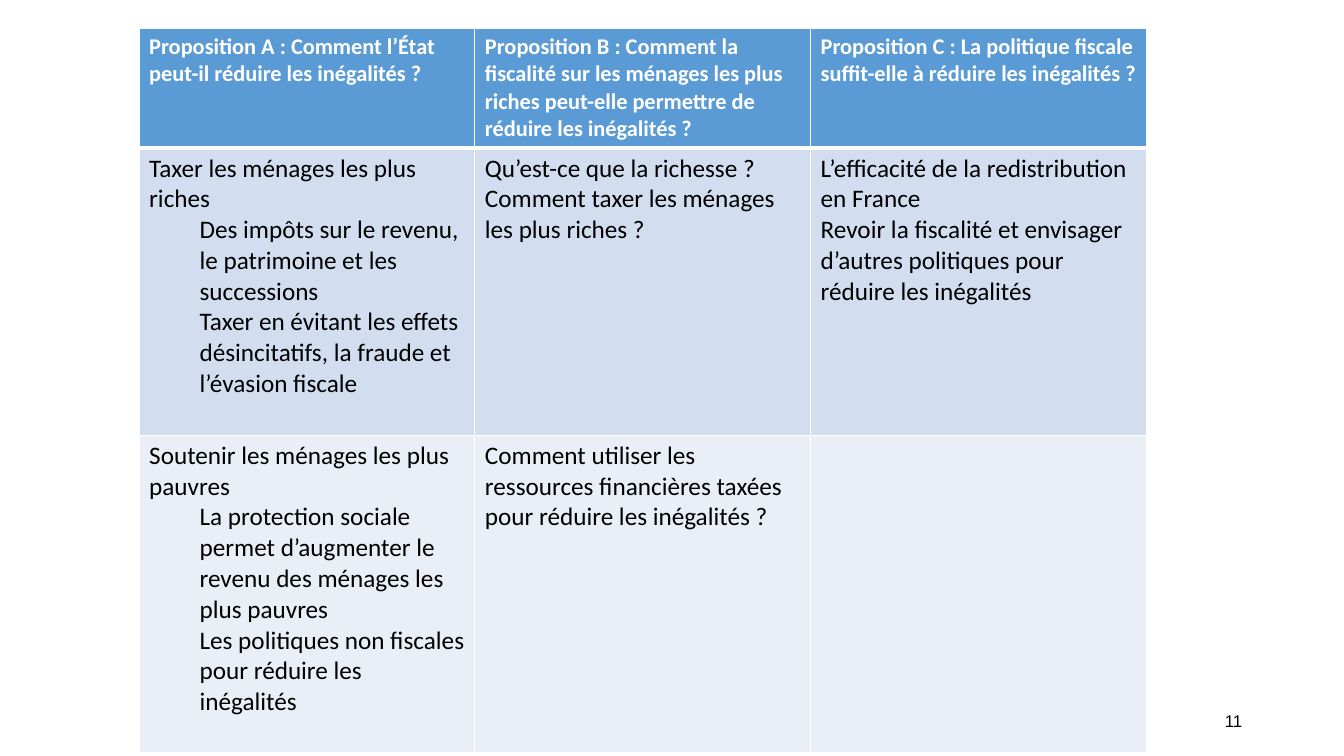
import pptx
import pptx.util
import pptx.dml.color
import pptx.enum.text
import pptx.oxml.ns
from lxml import etree

Inches, Pt = pptx.util.Inches, pptx.util.Pt

# Each cell is a list of (indent level, text).
ROWS = [
    [
        [(0, "Proposition A : Comment l’État peut-il réduire les inégalités ?")],
        [(0, "Proposition B : Comment la fiscalité sur les ménages les plus riches "
             "peut-elle permettre de réduire les inégalités ?")],
        [(0, "Proposition C : La politique fiscale suffit-elle à réduire les inégalités ?")],
    ],
    [
        [(0, "Taxer les ménages les plus riches"),
         (1, "Des impôts sur le revenu, le patrimoine et les successions"),
         (1, "Taxer en évitant les effets désincitatifs, la fraude et l’évasion fiscale")],
        [(0, "Qu’est-ce que la richesse ?"),
         (0, "Comment taxer les ménages les plus riches ?")],
        [(0, "L’efficacité de la redistribution en France"),
         (0, "Revoir la fiscalité et envisager d’autres politiques pour réduire les inégalités")],
    ],
    [
        [(0, "Soutenir les ménages les plus pauvres"),
         (1, "La protection sociale permet d’augmenter le revenu des ménages les plus pauvres"),
         (1, "Les politiques non fiscales pour réduire les inégalités")],
        [(0, "Comment utiliser les ressources financières taxées pour réduire les inégalités ?")],
        [],
    ],
]
ROW_HEIGHTS = [1.19, 2.85, 3.15]
# fill, text colour, size, bold
ROW_STYLES = [
    ("5B9BD5", "FFFFFF", 16, True),
    ("D2DEEF", "000000", 18, False),
    ("EAEFF7", "000000", 18, False),
]
COLUMN_WIDTH = 3.33
PAGE_NUMBER = "11"


def colour(value):
    return pptx.dml.color.RGBColor.from_string(value)


def format_text(para, font, size, text_colour, bold=False):
    for span in para.runs:
        span.font.name = font
        span.font.size = Pt(size)
        span.font.bold = bold
        span.font.color.rgb = colour(text_colour)


def add_borders(cell, widths):
    """Draw white cell borders; widths maps a side (L, R, T, B) to points."""
    properties = cell._tc.get_or_add_tcPr()
    qn = pptx.oxml.ns.qn
    for side, width in widths.items():
        line = etree.SubElement(properties, qn(f"a:ln{side}"), w=str(Pt(width)))
        fill = etree.SubElement(line, qn("a:solidFill"))
        etree.SubElement(fill, qn("a:srgbClr"), val="FFFFFF")


def fill_cell(cell, lines, row):
    fill, text_colour, size, bold = ROW_STYLES[row]
    add_borders(cell, {"L": 1, "R": 1, "T": 3 if row == 1 else 1, "B": 3 if row == 0 else 1})
    cell.fill.solid()
    cell.fill.fore_color.rgb = colour(fill)
    cell.text_frame.text = "\n".join(text for level, text in lines)
    for para, (level, text) in zip(cell.text_frame.paragraphs, lines):
        para.level = level
        properties = para._p.get_or_add_pPr()
        properties.set("marL", str(Inches(0.5 * level)))
        properties.set("indent", "0")
        format_text(para, "Calibri", size, text_colour, bold)


def add_proposition_table(page):
    columns = len(ROWS[0])
    frame = page.shapes.add_table(
        len(ROWS), columns, Inches(1.38), Inches(0.28),
        Inches(COLUMN_WIDTH * columns), Inches(sum(ROW_HEIGHTS)))
    table = frame.table
    for column in table.columns:
        column.width = Inches(COLUMN_WIDTH)
    for row, cells in enumerate(ROWS):
        table.rows[row].height = Inches(ROW_HEIGHTS[row])
        for column, lines in enumerate(cells):
            fill_cell(table.cell(row, column), lines, row)


def add_page_number(page):
    box = page.shapes.add_textbox(Inches(9.42), Inches(6.95), Inches(3), Inches(0.4))
    box.text_frame.word_wrap = True
    box.text_frame.vertical_anchor = pptx.enum.text.MSO_ANCHOR.MIDDLE
    box.text_frame.text = PAGE_NUMBER
    para = box.text_frame.paragraphs[0]
    para.alignment = pptx.enum.text.PP_ALIGN.RIGHT
    format_text(para, "Arial", 12, "000000")


def main():
    deck = pptx.Presentation()
    deck.slide_width, deck.slide_height = Inches(13.33), Inches(7.5)
    page = deck.slides.add_slide(deck.slide_layouts[6])
    add_page_number(page)
    add_proposition_table(page)
    deck.save("out.pptx")


if __name__ == "__main__":
    main()
